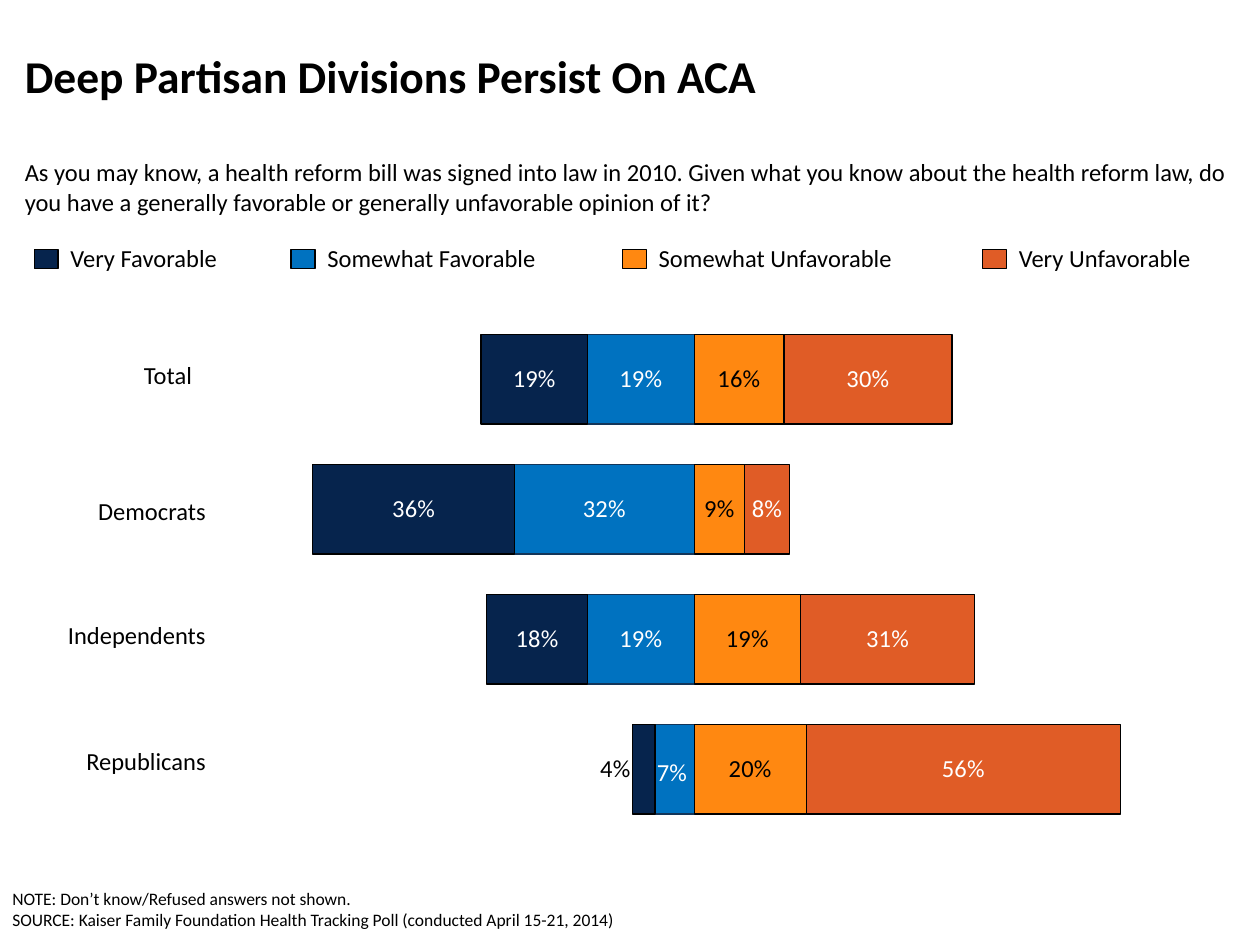
from lxml.etree import SubElement
from pptx import Presentation
from pptx.chart.data import CategoryChartData as Data
from pptx.dml.color import RGBColor as RGB
from pptx.enum.chart import XL_CHART_TYPE as Kind, XL_LABEL_POSITION as Spot
from pptx.enum.shapes import MSO_SHAPE as Shape
from pptx.enum.text import MSO_ANCHOR as Anchor, PP_ALIGN as Align
from pptx.oxml import parse_xml
from pptx.oxml.ns import nsdecls, qn
from pptx.util import Cm, Pt

BLACK = RGB(0x00, 0x00, 0x00)
WHITE = RGB(0xFF, 0xFF, 0xFF)
NAVY = RGB(0x06, 0x24, 0x4D)
BLUE = RGB(0x00, 0x72, 0xC0)
EDGE = RGB(0x13, 0x35, 0x59)
AMBER = RGB(0xFF, 0x88, 0x11)
RUST = RGB(0xE0, 0x5C, 0x26)
FONT = "Calibri"


def add_text(home, x, y, w, h, lines, size=14, bold=False, align=Align.LEFT):
    box = home.add_textbox(Cm(x), Cm(y), Cm(w), Cm(h))
    frame = box.text_frame
    frame.word_wrap = True
    frame.text = "\n".join(lines)
    for para in frame.paragraphs:
        para.alignment = align
        para.font.name = FONT
        para.font.size = Pt(size)
        para.font.bold = bold
        para.font.color.rgb = BLACK
    return frame


def make_layout(**parts):
    """Return a manual chart layout; each keyword is one of its elements."""
    node = parse_xml(f"<c:layout {nsdecls('c')}/>")
    manual = SubElement(node, qn("c:manualLayout"))
    for name, value in parts.items():
        SubElement(manual, qn(f"c:{name}")).set("val", str(value))
    return node


deck = Presentation()
deck.slide_width, deck.slide_height = Cm(25.4), Cm(19.05)
slide = deck.slides.add_slide(deck.slide_layouts[6])
shapes = slide.shapes

# Chart: favorable shares run left of zero, unfavorable ones right
series = [
    ("Series 1", (-0.07, -0.19, -0.32, -0.19), BLUE, EDGE, WHITE),
    ("Series 2", (-0.04, -0.18, -0.36, -0.19), NAVY, BLACK, WHITE),
    ("Series 3", (0.2, 0.19, 0.09, 0.16), AMBER, BLACK, BLACK),
    ("Series 4", (0.56, 0.31, 0.08, 0.3), RUST, BLACK, WHITE),
]
data = Data(number_format="0%;0%")
data.categories = ["1", "2", "3", "4"]
for name, values, *_ in series:
    data.add_series(name, values)
chart = shapes.add_chart(Kind.BAR_STACKED, Cm(1.04), Cm(6.12), Cm(25.91),
                         Cm(10.92), data).chart
chart.has_legend = False
chart.has_title = False
chart.font.name = FONT
chart.font.size = Pt(14)
chart.font.bold = False
chart.font.color.rgb = BLACK
chart.category_axis.visible = False
axis = chart.value_axis
axis.visible = False
axis.has_major_gridlines = False
axis.minimum_scale, axis.maximum_scale, axis.major_unit = -1.1, 1.1, 0.1

plot = chart.plots[0]
plot.gap_width, plot.overlap = 45, 100
plot.vary_by_categories = False
for bars, (_, _, fill, line, ink) in zip(plot.series, series):
    bars.invert_if_negative = False
    bars.format.fill.solid()
    bars.format.fill.fore_color.rgb = fill
    bars.format.line.color.rgb = line
    bars.format.line.width = Pt(0.75)
    labels = bars.data_labels
    labels.show_value = True
    labels.number_format = "0%;0%"
    labels.number_format_is_linked = False
    labels.position = Spot.CENTER
    labels.font.size = Pt(14)
    labels.font.color.rgb = ink

# Republican labels moved to suit their narrow bars
for bars, text, ink, x, y in [(plot.series[0], "7%", WHITE, -0.002, 0.007),
                              (plot.series[1], "4%", BLACK, -0.022, 0)]:
    label = bars.points[0].data_label
    label.text_frame.text = text
    font = label.text_frame.paragraphs[0].runs[0].font
    font.size = Pt(14)
    font.color.rgb = ink
    label.position = Spot.CENTER
    node = bars.data_labels._element.find(qn("c:dLbl"))
    node.insert(1, make_layout(x=x, y=y))

area = chart._chartSpace.chart.plotArea
for old in area.findall(qn("c:layout")):
    area.remove(old)
area.insert(0, make_layout(layoutTarget="inner", xMode="edge", yMode="edge",
                           x=0.02, y=0.02, w=0.96, h=0.96))

# Title and question
title = add_text(shapes, 0.25, 0.25, 24.66, 2.54,
                 ["Deep Partisan Divisions Persist On ACA"], 26, True)
title.vertical_anchor = Anchor.MIDDLE
add_text(shapes, 0.25, 3.05, 24.84, 1.45, [
    "As you may know, a health reform bill was signed into law in 2010. "
    "Given what you know about the health reform law, do you have a "
    "generally favorable or generally unfavorable opinion of it?"])

# Legend
legend = shapes.add_group_shape().shapes
for x, width, text, fill in [(0.69, 4.47, "Very Favorable", NAVY),
                             (5.87, 5.99, "Somewhat Favorable", BLUE),
                             (12.55, 6.81, "Somewhat Unfavorable", AMBER),
                             (19.81, 5.08, "Very Unfavorable", RUST)]:
    key = legend.add_shape(Shape.RECTANGLE, Cm(x), Cm(5.03), Cm(0.48), Cm(0.38))
    key.shadow.inherit = False
    key.fill.solid()
    key.fill.fore_color.rgb = fill
    key.line.color.rgb = BLACK
    key.line.width = Pt(0.75)
    add_text(legend, x + 0.48, 4.78, width, 0.86, [text])

# Row names
for x, y, width, text in [(-0.71, 7.14, 4.83, "Total"),
                          (-2.03, 9.88, 6.43, "Democrats"),
                          (-2.03, 12.37, 6.43, "Independents"),
                          (-2.03, 14.91, 6.43, "Republicans")]:
    add_text(shapes, x, y, width, 0.86, [text], align=Align.RIGHT)

add_text(shapes, 0, 17.78, 24.05, 1.12, [
    "NOTE: Don’t know/Refused answers not shown.",
    "SOURCE: Kaiser Family Foundation Health Tracking Poll "
    "(conducted April 15-21, 2014)"], 10)

deck.save("out.pptx")
